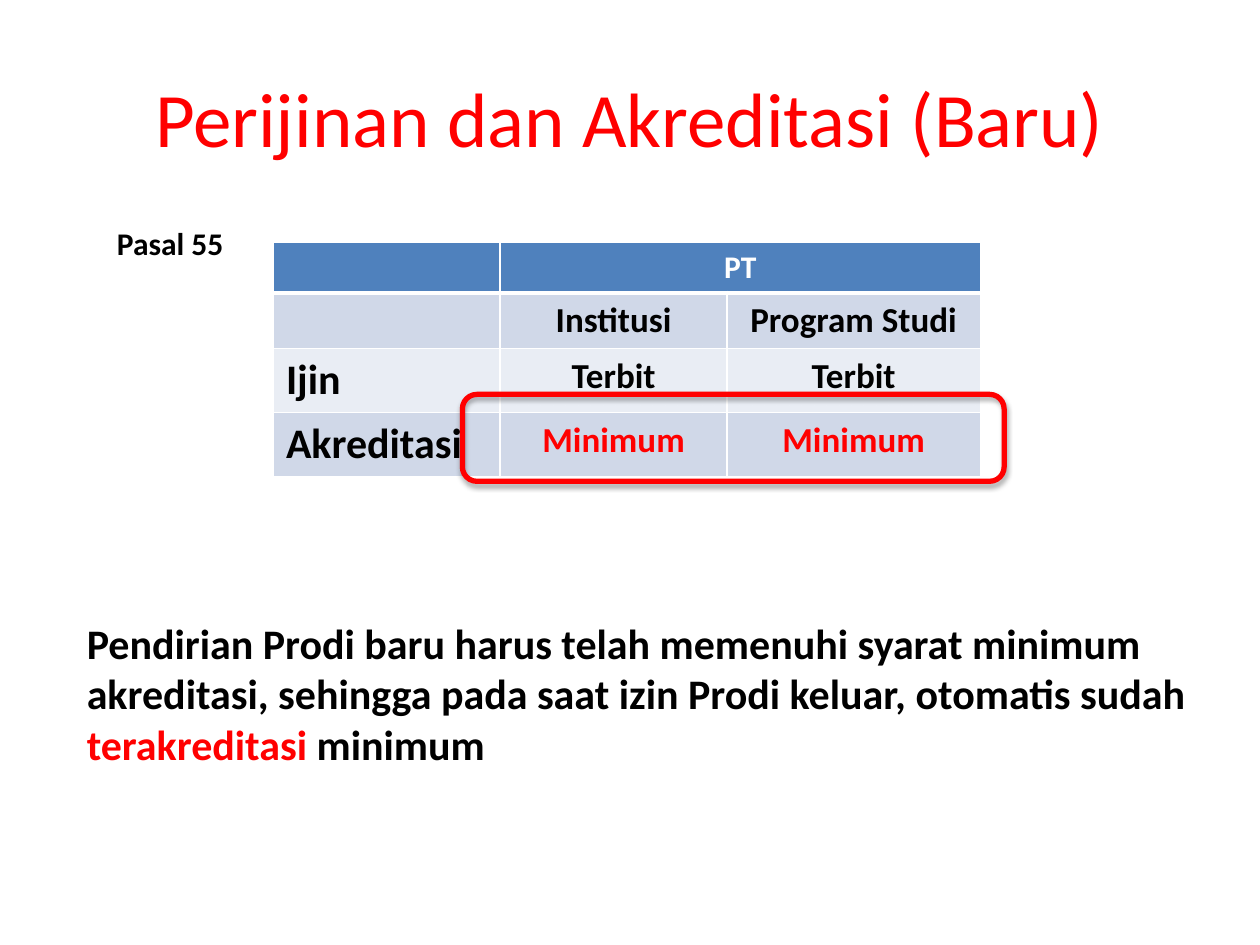
from lxml.etree import SubElement
from pptx import Presentation
from pptx.dml.color import RGBColor as Rgb
from pptx.enum.shapes import MSO_SHAPE as Shape
from pptx.enum.text import MSO_ANCHOR as Anchor, MSO_AUTO_SIZE as AutoSize, PP_ALIGN as Align
from pptx.oxml import parse_xml
from pptx.oxml.ns import nsdecls, qn
from pptx.util import Inches, Pt

COLORS = {
    "red": "FF0000", "black": "000000", "white": "FFFFFF",
    "header": "4F81BD", "band": "D0D8E8", "light": "E9EDF4",
}


class SlideBuilder:
    font_name = "Calibri"

    def __init__(self, slide):
        self.slide = slide

    def color(self, name):
        return Rgb.from_string(COLORS[name])

    def place(self, shape, box):
        for side, length in zip(("left", "top", "width", "height"), box):
            setattr(shape, side, Inches(length))

    def style(self, font, size, color="black", bold=True):
        formats = {"name": self.font_name, "size": Pt(size), "bold": bold}
        for attribute, value in formats.items():
            setattr(font, attribute, value)
        font.color.rgb = self.color(color)

    def title(self, text, box):
        heading = self.slide.shapes.title
        self.place(heading, box)
        frame = heading.text_frame
        frame.text = text
        frame.vertical_anchor = Anchor.MIDDLE
        frame.paragraphs[0].alignment = Align.CENTER
        self.style(frame.paragraphs[0].runs[0].font, 44, "red", False)

    def text(self, lines, box, size):
        label = self.slide.shapes.add_textbox(*map(Inches, box))
        frame = label.text_frame
        frame.word_wrap = False
        frame.auto_size = AutoSize.SHAPE_TO_FIT_TEXT
        paragraph = frame.paragraphs[0]
        for number, line in enumerate(lines):
            if number:
                paragraph.add_line_break()
            for words, color in line:
                run = paragraph.add_run()
                run.text = words
                self.style(run.font, size, color)

    def borders(self, cell, bottom):
        properties = cell._tc.get_or_add_tcPr()
        widths = {"a:lnL": 1, "a:lnR": 1, "a:lnT": 1, "a:lnB": bottom}
        for position, (tag, width) in enumerate(widths.items()):
            line = parse_xml(
                f'<{tag} {nsdecls("a")} w="{Pt(width)}"><a:solidFill>'
                f'<a:srgbClr val="{COLORS["white"]}"/></a:solidFill></{tag}>')
            properties.insert(position, line)

    def table(self, rows, box, widths, fills):
        grid = self.slide.shapes.add_table(
            len(rows), len(widths), *map(Inches, box)).table
        for column, width in zip(grid.columns, widths):
            column.width = Inches(width)
        for r, (row, fill) in enumerate(zip(rows, fills)):
            for c, (words, size, color) in enumerate(row):
                cell = grid.cell(r, c)
                cell.fill.solid()
                cell.fill.fore_color.rgb = self.color(fill)
                self.borders(cell, 1 if r else 3)
                paragraph = cell.text_frame.paragraphs[0]
                paragraph.alignment = Align.CENTER if c else Align.LEFT
                if words:
                    run = paragraph.add_run()
                    run.text = words
                    self.style(run.font, size, color)
        grid.cell(0, 1).merge(grid.cell(0, 2))

    def highlight(self, box):
        frame = self.slide.shapes.add_shape(
            Shape.ROUNDED_RECTANGLE, *map(Inches, box))
        frame.fill.background()
        frame.line.color.rgb = self.color("red")
        frame.line.width = Pt(3)
        frame.shadow.inherit = False
        effects = frame._element.spPr.find(qn("a:effectLst"))
        shadow = SubElement(
            effects, qn("a:outerShdw"), blurRad=str(Pt(3.1)), dist=str(Pt(1.8)),
            dir="5400000", rotWithShape="0")
        tint = SubElement(shadow, qn("a:srgbClr"), val=COLORS["black"])
        SubElement(tint, qn("a:alpha"), val="35000")


def main():
    deck = Presentation()
    deck.slide_width, deck.slide_height = Inches(10), Inches(7.5)
    page = SlideBuilder(deck.slides.add_slide(deck.slide_layouts[5]))

    page.title("Perijinan dan Akreditasi (Baru)", (0.5, 0.3, 9, 1.25))

    blank = ("", 18, "black")
    permits = [
        [blank, ("PT", 18, "white"), blank],
        [blank, ("Institusi", 20, "black"), ("Program Studi", 20, "black")],
        [("Ijin", 24, "black")] + [("Terbit", 20, "black")] * 2,
        [("Akreditasi", 24, "black")] + [("Minimum", 20, "red")] * 2,
    ]
    page.table(permits, (2.17, 1.92, 5.61, 1.62), (1.8, 1.8, 2.01),
               ("header", "band", "light", "band"))
    page.highlight((3.67, 3.13, 4.3, 0.69))

    requirement = [
        [("Pendirian Prodi baru harus telah memenuhi syarat minimum", "black")],
        [("akreditasi, sehingga pada saat izin Prodi keluar, otomatis sudah", "black")],
        [("terakreditasi ", "red"), ("minimum", "black")],
    ]
    page.text(requirement, (0.59, 4.85, 9.01, 1.31), 24)
    page.text([[("Pasal 55", "black")]], (0.83, 1.73, 1.06, 0.4), 18)

    deck.save("out.pptx")


if __name__ == "__main__":
    main()
